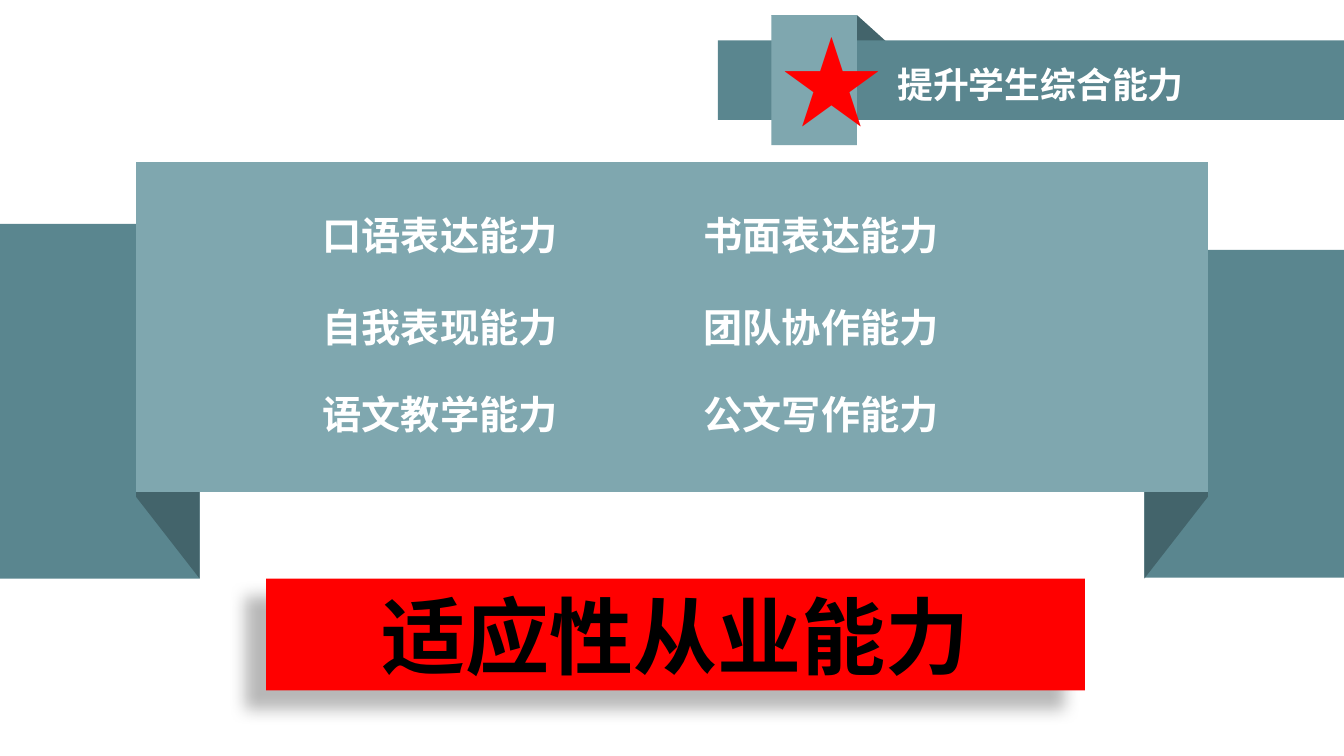
import pptx
import pptx.util
import pptx.dml.color
import pptx.enum.shapes
import pptx.enum.text
import pptx.oxml
import pptx.oxml.ns

Inches = pptx.util.Inches
RGBColor = pptx.dml.color.RGBColor
ANCHOR = pptx.enum.text.MSO_ANCHOR
ALIGN = pptx.enum.text.PP_ALIGN

DARK_TEAL = RGBColor(0x43, 0x64, 0x6B)
MID_TEAL = RGBColor(0x5A, 0x86, 0x8F)
LIGHT_TEAL = RGBColor(0x7F, 0xA7, 0xAF)
RED = RGBColor(0xFF, 0x00, 0x00)
WHITE = RGBColor(0xFF, 0xFF, 0xFF)
BLACK = RGBColor(0x00, 0x00, 0x00)
HEADING_FONT = "Noto Sans CJK SC"
SHADOW = (
    '<a:effectLst %s><a:outerShdw blurRad="149860" dist="250190" dir="8460000">'
    '<a:srgbClr val="000000"><a:alpha val="28000"/></a:srgbClr>'
    "</a:outerShdw></a:effectLst>" % pptx.oxml.ns.nsdecls("a")
)


class RibbonSlide:
    """Draws flat ribbon panels, folds and labels on one slide."""

    def __init__(self, slide, font):
        self.shapes = slide.shapes
        self.font = font

    def paint(self, shape, color):
        shape.shadow.inherit = False
        shape.fill.solid()
        shape.fill.fore_color.rgb = color
        shape.line.fill.background()
        return shape

    def panel(self, left, top, width, height, color):
        rectangle = pptx.enum.shapes.MSO_SHAPE.RECTANGLE
        shape = self.shapes.add_shape(
            rectangle, Inches(left), Inches(top), Inches(width), Inches(height))
        return self.paint(shape, color)

    def fold(self, corners, color):
        points = [(Inches(x), Inches(y)) for x, y in corners]
        builder = self.shapes.build_freeform(*points[0])
        builder.add_line_segments(points[1:], close=True)
        return self.paint(builder.convert_to_shape(), color)

    def label(self, left, top, width, height, margins=(0.1, 0.05), anchor=ANCHOR.TOP):
        box = self.shapes.add_textbox(
            Inches(left), Inches(top), Inches(width), Inches(height))
        frame = box.text_frame
        frame.word_wrap = True
        frame.vertical_anchor = anchor
        frame.margin_left = frame.margin_right = Inches(margins[0])
        frame.margin_top = frame.margin_bottom = Inches(margins[1])
        return frame

    def add_text(self, frame, text, size, color, bold=True, align=ALIGN.LEFT, font=None):
        paragraph = frame.paragraphs[0]
        paragraph.alignment = align
        run = paragraph.add_run()
        run.text = text
        run.font.size = pptx.util.Pt(size)
        run.font.bold = bold
        run.font.color.rgb = color
        run.font.name = font or self.font
        east_asian = pptx.oxml.parse_xml(
            '<a:ea %s typeface="%s"/>' % (pptx.oxml.ns.nsdecls("a"), font or self.font))
        run._r.get_or_add_rPr().append(east_asian)
        return run


def main():
    deck = pptx.Presentation()
    deck.slide_width, deck.slide_height = Inches(13.33), Inches(7.5)
    ribbon = RibbonSlide(deck.slides.add_slide(deck.slide_layouts[6]), HEADING_FONT)

    ribbon.fold([(7.65, 0.15), (8.5, 0.15), (9.33, 0.9)], DARK_TEAL)
    ribbon.panel(7.12, 0.4, 6.21, 0.79, MID_TEAL)
    ribbon.panel(7.65, 0.15, 0.85, 1.29, LIGHT_TEAL)

    ribbon.panel(0, 2.22, 1.98, 3.52, MID_TEAL)
    ribbon.panel(11.35, 2.48, 1.98, 3.25, MID_TEAL)
    for outer, inner in ((1.35, 1.98), (11.98, 11.35)):
        ribbon.fold([(outer, 1.61), (inner, 2.11), (inner, 5.74), (outer, 4.93)], DARK_TEAL)
    ribbon.panel(1.35, 1.61, 10.63, 3.27, LIGHT_TEAL)

    heading = ribbon.label(8.82, 0.49, 4.19, 0.61, margins=(0.08, 0.04))
    heading_run = ribbon.add_text(heading, "提升学生综合能力", 32, WHITE)
    heading_run._r.get_or_add_rPr().set("cap", "small")

    star = ribbon.label(7.65, 0.33, 0.85, 0.94, anchor=ANCHOR.MIDDLE)
    ribbon.add_text(star, "★", 72, RED, bold=False, align=ALIGN.CENTER)

    ability_rows = [
        (2.05, ("口语表达能力", "书面表达能力")),
        (2.96, ("自我表现能力", "团队协作能力")),
        (3.82, ("语文教学能力", "公文写作能力")),
    ]
    for top, abilities in ability_rows:
        for left, ability in zip((3.2, 6.98), abilities):
            frame = ribbon.label(left, top, 3.73, 0.57, margins=(0, 0.05))
            ribbon.add_text(frame, ability, 28, WHITE)
            frame.paragraphs[0].space_after = pptx.util.Pt(6)

    conclusion = ribbon.panel(2.64, 5.74, 8.12, 1.11, RED)
    properties = conclusion._element.spPr
    properties.remove(properties.find(pptx.oxml.ns.qn("a:effectLst")))
    properties.append(pptx.oxml.parse_xml(SHADOW))
    conclusion.text_frame.vertical_anchor = ANCHOR.MIDDLE
    ribbon.add_text(conclusion.text_frame, "适应性从业能力", 60, BLACK,
                    align=ALIGN.CENTER, font="Arial")

    deck.save("out.pptx")


if __name__ == "__main__":
    main()
